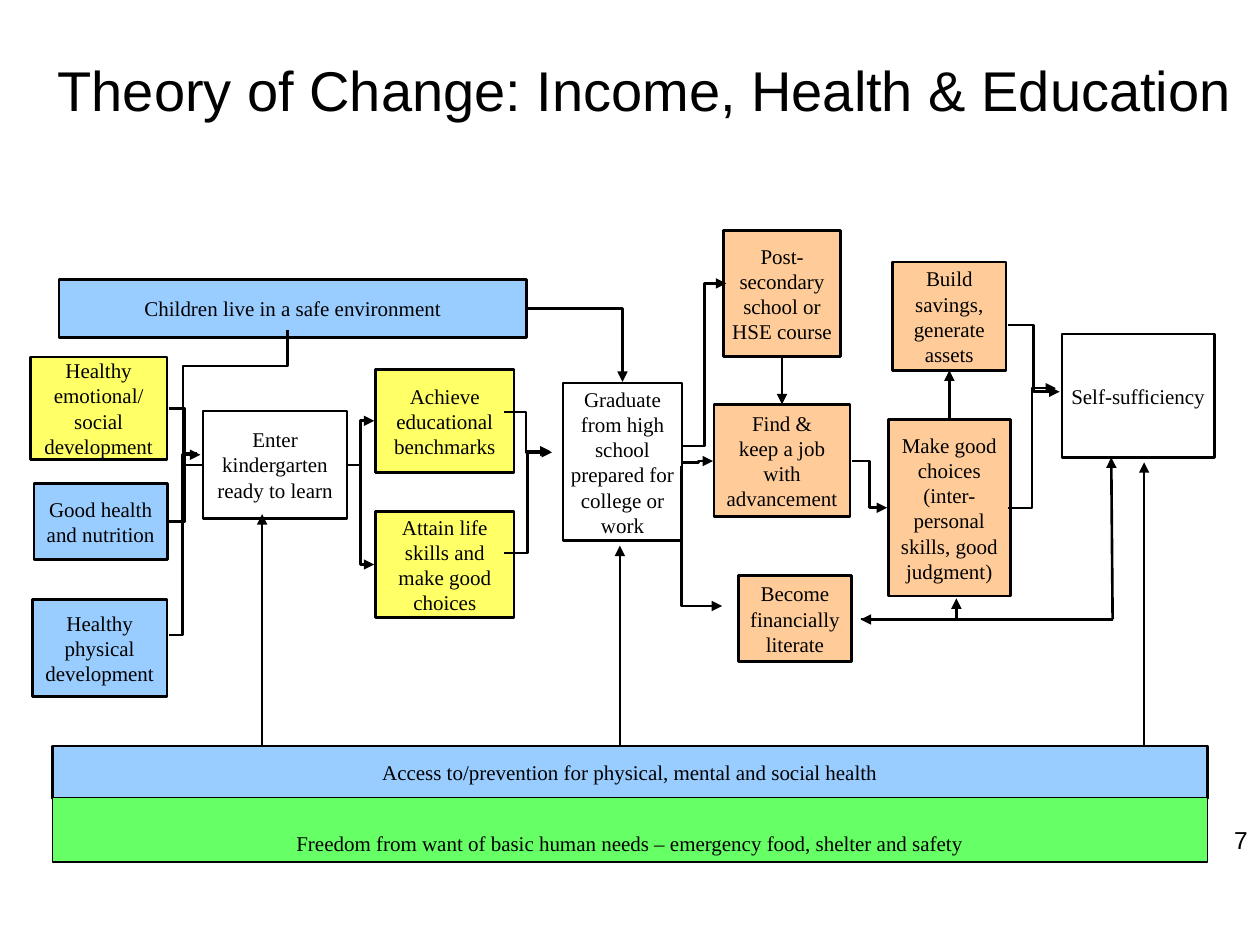
from lxml import etree
from pptx import Presentation
from pptx.dml.color import RGBColor
from pptx.enum import shapes, text
from pptx.oxml.ns import qn
from pptx.util import Pt

COLORS = {"black": "000000", "blue": "99CCFF", "yellow": "FFFF66",
          "orange": "FFCC99", "green": "66FF66"}
SERIF, SANS = "Times New Roman", "Arial"
TITLE = "Theory of Change: Income, Health & Education"
PAGE = "7"

# name: (text, fill, left, top, width, height)
BOXES = {
    "benchmarks": ("Achieve educational benchmarks", "yellow", 214.6, 211, 79.2, 59),
    "kindergarten": ("Enter kindergarten ready to learn", None, 116, 234.8, 82.4, 61.4),
    "life skills": ("Attain life skills and make good choices", "yellow", 214.6, 292.3, 79.2, 60.5),
    "emotional": ("Healthy emotional/\nsocial development", "yellow", 17.4, 204, 78, 58.5),
    "physical": ("Healthy physical development", "blue", 18.5, 342.7, 77, 55.4),
    "safe": ("Children live in a safe environment", "blue", 33.8, 159.8, 267.1, 33.1),
    "nutrition": ("Good health and nutrition", "blue", 19.4, 276.5, 76.3, 43.2),
    "self": ("Self-sufficiency", None, 606.8, 190.8, 87.1, 70.6),
    "graduate": ("Graduate from high school prepared for college or work",
                 None, 321.8, 218.9, 67.9, 90),
    "choices": ("Make good choices (inter-personal skills, good judgment)",
                "orange", 507.6, 239.8, 69.8, 100.8),
    "job": ("Find &\nkeep a job with advancement", "orange", 408, 231.1, 77.8, 64.1),
    "literate": ("Become financially literate", "orange", 421.9, 329, 64.8, 49),
    "school": ("Post-secondary school or HSE course", "orange", 413.6, 131.8, 66.6, 72),
    "savings": ("Build savings, generate assets", "orange", 510.1, 149.8, 64.8, 61.9),
    "access": ("Access to/prevention for physical, mental and social health",
               "blue", 30, 426.2, 660, 30.2),
    "needs": ("Freedom from want of basic human needs – emergency food, shelter and safety",
              "green", 30, 455.8, 660, 36.7),
}

# (start, end, bend positions as shares of width and height, arrowhead)
ELBOWS = [
    ((96.5, 233.3), (115.2, 265.7), [0.5], None),
    ((96.5, 298.1), (115.2, 265.7), [0.5], None),
    ((112.3, 259.2), (164.2, 188.6), [-0.15, 0.71], None),
    ((96.5, 362.9), (114.5, 259.9), [0.44], "tailEnd"),
    ((198.7, 265.7), (213.8, 240.5), [0.49], "tailEnd"),
    ((198.7, 265.7), (213.8, 322.6), [0.49], "tailEnd"),
    ((288, 316.1), (314.6, 257.8), [0.5], "tailEnd"),
    ((288, 235.4), (315.4, 258.5), [0.46], "tailEnd"),
    ((390.2, 254.9), (415, 162), [0.5], "tailEnd"),
    ((576, 290.2), (603.4, 221.8), [0.5], "tailEnd"),
    ((576, 185.8), (605.5, 223.9), [0.5], "tailEnd"),
    ((390.2, 264.2), (407.5, 263.5), [0.52], "tailEnd"),
    ((486.7, 263.5), (506.9, 290.2), [0.5], "tailEnd"),
    ((412.6, 346.3), (389.5, 266.4), [], "headEnd"),
    ((491.8, 353.8), (546.5, 342), [], "tailEnd"),
    ((301.7, 176.4), (355.7, 218.2), [], "tailEnd"),
]
ARROWS = [
    ((635.8, 354), (491.8, 354)),
    ((635.8, 354), (635, 261.4)),
    ((149.8, 426.2), (149.8, 293.8)),
    ((354.2, 426.2), (354.2, 311.8)),
    ((653.8, 426.2), (653.8, 264.2)),
]
# (from box, side, to box, side)
JOINED = [("school", 2, "job", 0), ("choices", 0, "savings", 2)]


def color(name):
    return RGBColor.from_string(COLORS[name])


def write(sp, content, size, font, align):
    tf = sp.text_frame
    tf.word_wrap = True
    tf.text = content
    for p in tf.paragraphs:
        p.alignment = align
        for r in p.runs:
            r.font.size, r.font.name = Pt(size), font
            r.font.color.rgb = color("black")
    return tf


def add_label(s, content, size, align, *place):
    sp = s.shapes.add_textbox(*map(Pt, place))
    write(sp, content, size, SANS, align)


def add_box(s, content, fill, *place):
    sp = s.shapes.add_shape(shapes.MSO_SHAPE.RECTANGLE, *map(Pt, place))
    sp.shadow.inherit = False
    if fill:
        sp.fill.solid()
        sp.fill.fore_color.rgb = color(fill)
    else:
        sp.fill.background()
    sp.line.color.rgb = color("black")
    sp.line.width = Pt(1.5)
    tf = write(sp, content, 12, SERIF, text.PP_ALIGN.CENTER)
    tf.margin_left = tf.margin_right = tf.margin_top = tf.margin_bottom = Pt(3.6)
    tf.vertical_anchor = text.MSO_ANCHOR.MIDDLE
    return sp


def add_line(s, kind, start, end, head="tailEnd"):
    c = s.shapes.add_connector(kind, *map(Pt, start + end))
    c.line.color.rgb = color("black")
    c.line.width = Pt(1.5)
    if head:
        etree.SubElement(c.line._get_or_add_ln(), qn("a:" + head), type="triangle")
    etree.SubElement(c._element.spPr, qn("a:effectLst"))
    return c


def add_elbow(s, start, end, bends, head):
    c = add_line(s, shapes.MSO_CONNECTOR.ELBOW, start, end, head)
    geom = c._element.spPr.find(qn("a:prstGeom"))
    geom.set("prst", f"bentConnector{len(bends) + 2}")
    guides = geom.find(qn("a:avLst"))
    if guides is None:
        guides = etree.SubElement(geom, qn("a:avLst"))
    for i, bend in enumerate(bends, 1):
        etree.SubElement(guides, qn("a:gd"), name=f"adj{i}",
                         fmla=f"val {round(bend * 100000)}")


def main():
    prs = Presentation()
    prs.slide_width, prs.slide_height = Pt(720), Pt(540)
    s = prs.slides.add_slide(prs.slide_layouts[6])

    # Title and page number
    add_label(s, TITLE, 32, text.PP_ALIGN.CENTER, 17.3, 28, 702.7, 32)
    add_label(s, PAGE, 14, text.PP_ALIGN.RIGHT, 552, 468, 168, 37.4)

    # Boxes
    boxes = {name: add_box(s, *box) for name, box in BOXES.items()}
    boxes["needs"].line.width = Pt(0.75)
    boxes["needs"].text_frame.vertical_anchor = text.MSO_ANCHOR.BOTTOM

    # Connectors
    for elbow in ELBOWS:
        add_elbow(s, *elbow)
    straight = shapes.MSO_CONNECTOR.STRAIGHT
    for start, end in ARROWS:
        add_line(s, straight, start, end)
    for source, side, target, target_side in JOINED:
        c = add_line(s, straight, (0, 0), (0, 0))
        c.begin_connect(boxes[source], side)
        c.end_connect(boxes[target], target_side)

    prs.save("out.pptx")


if __name__ == "__main__":
    main()
